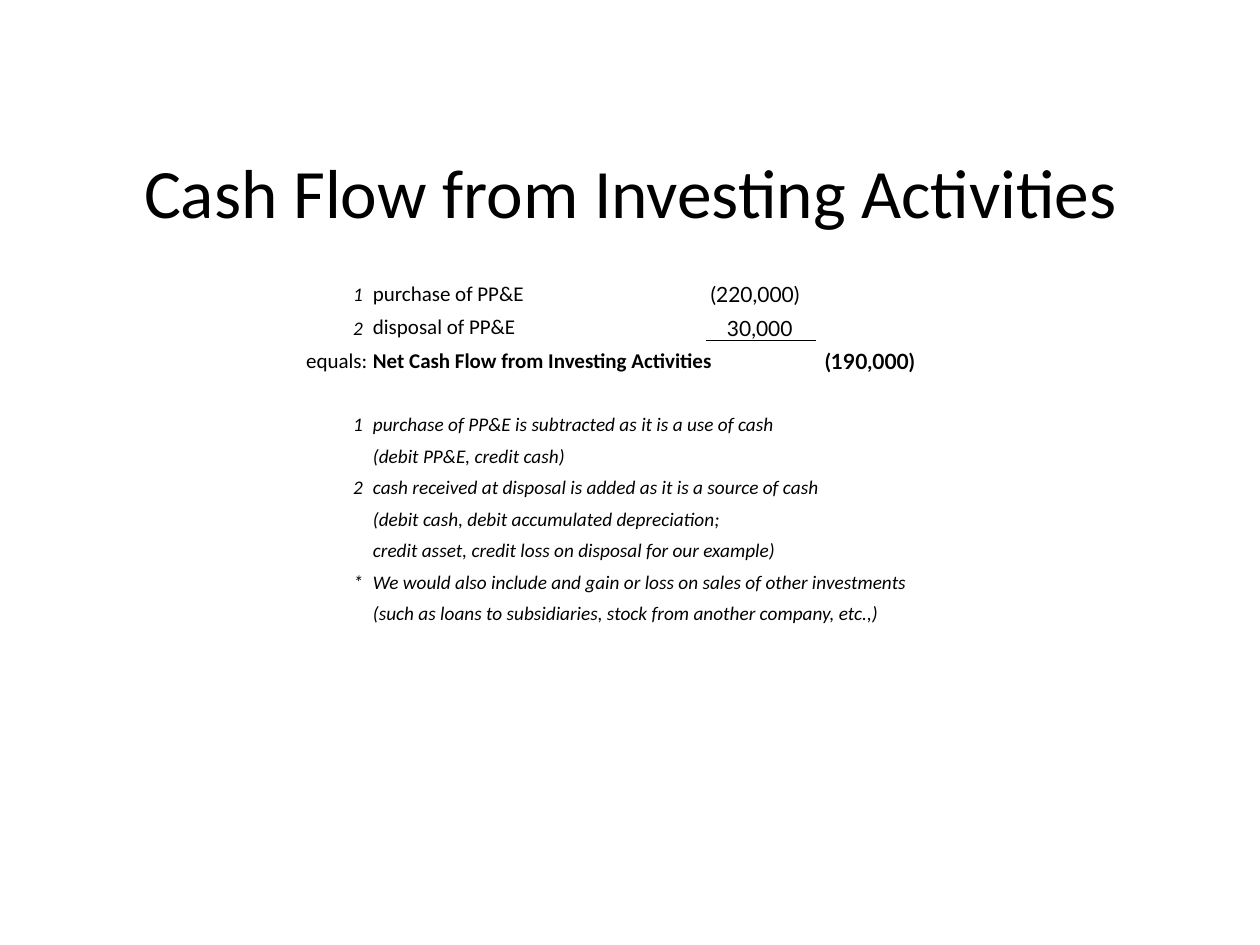
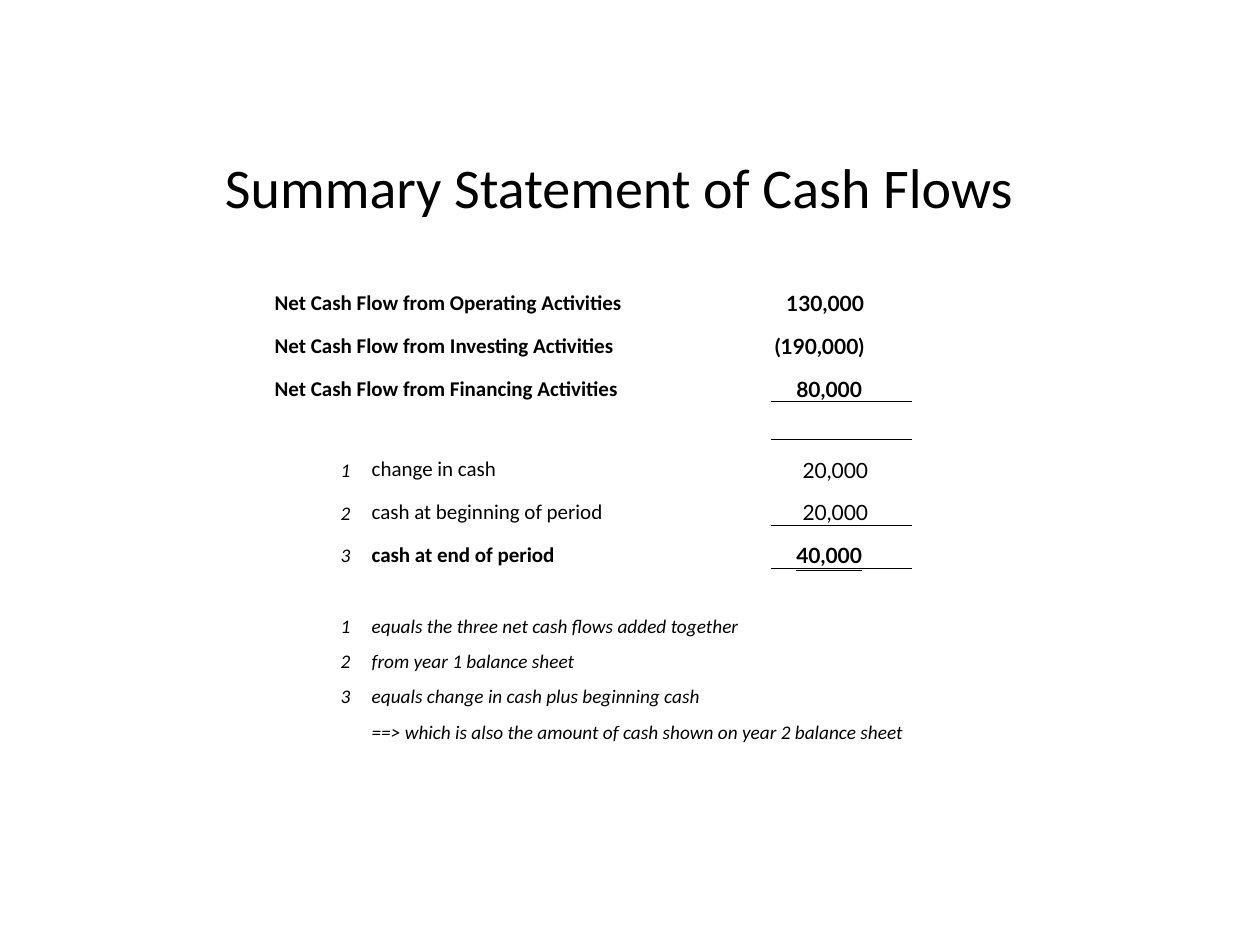
from lxml import etree
from pptx import Presentation, util as u
from pptx.dml.color import RGBColor
from pptx.enum import text
from pptx.oxml import ns

COLORS = {"ink": "000000", "paper": "FFFFFF"}
PLAIN_STYLE = "{2D5ABB26-0587-4C30-8999-92F81FD0307C}"
INSET = 0.01
LABEL = {"name": "Calibri", "size": u.Pt(12)}
NOTE = {"name": "Calibri", "size": u.Pt(11), "italic": True}
FIGURE = {"name": "Lato", "size": u.Pt(12)}
BOLD = {"bold": True}
DOUBLE = {"underline": text.MSO_UNDERLINE.DOUBLE_LINE}


def set_all(target, values):
    for name, value in values.items():
        setattr(target, name, value)


def write(para, words, style):
    span = para.add_run()
    span.text = words
    set_all(span.font, style)
    span.font.color.rgb = RGBColor.from_string(COLORS["ink"])


def add_title(page, box, words, size):
    frame = page.shapes.add_textbox(*map(u.Inches, box)).text_frame
    set_all(frame, {"word_wrap": True, "vertical_anchor": text.MSO_ANCHOR.MIDDLE})
    para = frame.paragraphs[0]
    para.alignment = text.PP_ALIGN.CENTER
    write(para, words, {"name": "Calibri", "size": u.Pt(size)})


def marker(words, gap):
    return {"col": 0, "words": words, "style": NOTE, "right": gap}


def label(words, span=1, col=1, style=LABEL):
    return {"col": col, "words": words, "style": style, "span": span}


def note(words, span):
    return label(words, span, style=NOTE)


def figure(words, indent, col=3, **extra):
    return {"col": col, "words": words, "style": FIGURE, "left": indent, **extra}


def bold(entry):
    return {**entry, "style": {**entry["style"], **BOLD}}


def rule(cell, edge):
    line = etree.Element(ns.qn(f"a:{edge}"), w=str(u.Pt(0.5)))
    fill = etree.SubElement(line, ns.qn("a:solidFill"))
    etree.SubElement(fill, ns.qn("a:srgbClr"), val=COLORS["ink"])
    cell._tc.get_or_add_tcPr().insert(0, line)


def set_tab(para, position):
    stops = etree.SubElement(para._p.get_or_add_pPr(), ns.qn("a:tabLst"))
    etree.SubElement(stops, ns.qn("a:tab"), pos=str(u.Inches(position)), algn="l")


def prepare_cell(cell):
    margins = {f"margin_{side}": u.Inches(INSET) for side in ("left", "right", "top")}
    set_all(cell, {**margins, "margin_bottom": 0,
                   "vertical_anchor": text.MSO_ANCHOR.BOTTOM})
    cell.fill.background()
    cell.text_frame.paragraphs[0]._p.get_or_add_endParaRPr().set("sz", "1100")


def fill_cell(table, row, entry):
    col = entry["col"]
    cell = table.cell(row, col)
    if entry.get("span", 1) > 1:
        cell.merge(table.cell(row, col + entry["span"] - 1))
    para = cell.text_frame.paragraphs[0]
    if "right" in entry:
        para.alignment = text.PP_ALIGN.RIGHT
        cell.margin_right = u.Inches(entry["right"])
    if "tab" in entry:
        set_tab(para, entry["tab"])
    cell.margin_left = u.Inches(entry.get("left", INSET))
    write(para, entry["words"], entry["style"])


def add_statement(page, box, widths, heights, rows, ruled):
    shape = page.shapes.add_table(len(rows), len(widths), *map(u.Inches, box))
    table = shape.table
    set_all(table, {"first_row": False, "horz_banding": False})
    table._tbl.tblPr.find(ns.qn("a:tableStyleId")).text = PLAIN_STYLE
    for column, width in zip(table.columns, widths):
        column.width = u.Inches(width)
    for line, height in zip(table.rows, heights):
        line.height = u.Inches(height)
    for cell in table.iter_cells():
        prepare_cell(cell)
    for row, entries in enumerate(rows):
        for entry in entries:
            fill_cell(table, row, entry)
    for row, col in ruled:
        rule(table.cell(row, col), "lnB")
        below = table.cell(row + 1, col)
        if not below.is_spanned:
            rule(below, "lnT")


def investing_slide(page):
    add_title(page, (0.67, 1.12, 8.67, 0.79), "Cash Flow from Investing Activities", 39.6)
    gap = 0.07
    rows = [
        [marker("1", gap), label("purchase of PP&E", 2), figure("(220,000)", 0.04)],
        [marker("2", gap), label("disposal of PP&E", 2), figure("30,000", 0.17)],
        [label("equals:", col=0),
         bold(label("Net Cash Flow from Investing Activities", 3)),
         bold(figure("(190,000)", 0.07, col=4))],
        [],
        [marker("1", gap), note("purchase of PP&E is subtracted as it is a use of cash", 3)],
        [note("(debit PP&E, credit cash)", 2)],
        [marker("2", gap),
         note("cash received at disposal is added as it is a source of cash", 4)],
        [note("(debit cash, debit accumulated depreciation;", 3)],
        [note("credit asset, credit loss on disposal for our example)", 3)],
        [marker("*", gap),
         note("We would also include and gain or loss on sales of other investments", 4)],
        [note("(such as loans to subsidiaries, stock from another company, etc.,)", 4)],
    ]
    heights = [0.8 / 3] * 3 + [0.25] * 8
    add_statement(page, (2.42, 2.17, 5.06, 2.8), (0.53, 0.67, 1.98, 0.88, 1),
                  heights, rows, [(1, 3)])


def summary_slide(page):
    add_title(page, (0.75, 1.12, 8.33, 0.71), "Summary Statement of Cash Flows", 32)
    gap = 0.16
    flows = [("Operating", "130,000", 0.12), ("Investing", "(190,000)", 0.03),
             ("Financing", "80,000", 0.2)]
    rows = [[bold(label(f"Net Cash Flow from {kind} Activities", 3, col=0)),
             bold(figure(amount, indent))] for kind, amount, indent in flows]
    closing = bold(figure("\t40,000", INSET, tab=0.19))
    closing["style"].update(DOUBLE)
    rows += [
        [],
        [marker("1", gap), label("change in cash"), figure("20,000", 0.25)],
        [marker("2", gap), label("cash at beginning of period"), figure("20,000", 0.25)],
        [marker("3", gap), bold(label("cash at end of period")), closing],
        [],
        [marker("1", gap), note("equals the three net cash flows added together", 3)],
        [marker("2", gap), note("from year 1 balance sheet", 1)],
        [marker("3", gap), note("equals change in cash plus beginning cash", 2)],
        [note("==> which is also the amount of cash shown on year 2 balance sheet", 4)],
    ]
    heights = [0.34] * 3 + [0.3] + [0.34] * 3 + [0.28] * 5
    add_statement(page, (2.17, 2.17, 5.83, 3.75), (0.77, 2.28, 0.9, 1.12, 0.77),
                  heights, rows, [(2, 3), (5, 3)])


def main():
    deck = Presentation()
    set_all(deck, {"slide_width": u.Inches(10), "slide_height": u.Inches(7.5)})
    for build in (investing_slide, summary_slide):
        page = deck.slides.add_slide(deck.slide_layouts[6])
        page.background.fill.solid()
        page.background.fill.fore_color.rgb = RGBColor.from_string(COLORS["paper"])
        build(page)
    deck.save("out.pptx")


if __name__ == "__main__":
    main()
